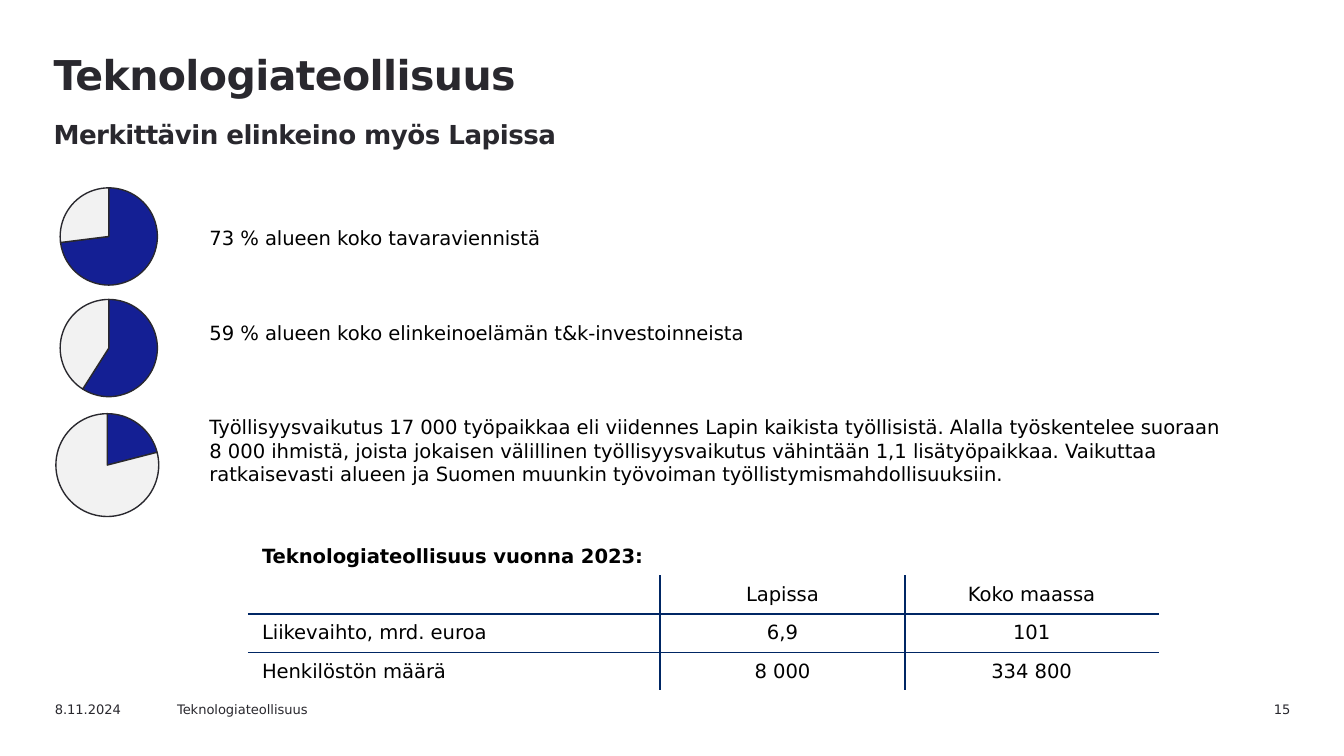
from dataclasses import dataclass

from pptx import Presentation
from pptx.chart.data import CategoryChartData
from pptx.dml.color import RGBColor
from pptx.enum.chart import XL_CHART_TYPE
from pptx.enum.text import MSO_ANCHOR, MSO_AUTO_SIZE, PP_ALIGN
from pptx.oxml import parse_xml
from pptx.oxml.ns import nsdecls
from pptx.util import Pt


@dataclass(frozen=True)
class Theme:
    font: str = "DejaVu Sans"
    dark: str = "29282E"
    black: str = "000000"
    blue: str = "141F94"
    pale: str = "F2F2F2"
    rule: str = "002664"
    head: float = 22
    sub: float = 14
    body: float = 10.5
    small: float = 7


THEME = Theme()


def write(para, text, size=THEME.body, color=THEME.black, bold=False,
          align=PP_ALIGN.LEFT, before=0, leading=None, track=0, tab=None):
    """Fill a paragraph; track is in hundredths of a point, tab in points."""
    props = para._p.get_or_add_pPr()
    props.set("marL", "0")
    props.set("indent", "0")
    props.append(parse_xml(f"<a:buNone {nsdecls('a')}/>"))
    if tab:
        props.append(parse_xml(f'<a:tabLst {nsdecls("a")}>'
                               f'<a:tab pos="{Pt(tab)}" algn="l"/></a:tabLst>'))
    para.alignment = align
    para.space_before, para.space_after = Pt(before), Pt(0)
    para.line_spacing = Pt(leading) if leading else 1.0
    if not text:
        para._p.append(parse_xml(
            f'<a:endParaRPr {nsdecls("a")} sz="{int(size * 100)}"/>'))
        return
    run = para.add_run()
    run.text = text
    run.font.name, run.font.size, run.font.bold = THEME.font, Pt(size), bold
    run.font.color.rgb = RGBColor.from_string(color)
    if track:
        run._r.get_or_add_rPr().set("spc", str(track))


class Page:
    """Holds the theme and the slide being drawn."""

    def __init__(self, deck, theme):
        self.theme = theme
        self.slide = deck.slides.add_slide(deck.slide_layouts[1])

    def fill(self, shape, box, lines):
        """Place a text shape and write (text, format) lines into it."""
        shape.left, shape.top, shape.width, shape.height = map(Pt, box)
        frame = shape.text_frame
        frame.word_wrap = True
        frame.auto_size = MSO_AUTO_SIZE.NONE
        frame.vertical_anchor = MSO_ANCHOR.TOP
        for i, (text, style) in enumerate(lines):
            para = frame.add_paragraph() if i else frame.paragraphs[0]
            write(para, text, **style)

    def title(self, box, head, sub):
        look = dict(color=self.theme.dark, bold=True, leading=27, track=-30)
        self.fill(self.slide.shapes.title, box,
                  [(head, dict(look, size=self.theme.head)),
                   (sub, dict(look, size=self.theme.sub))])

    def body(self, box, items, gap, tab):
        self.fill(self.slide.placeholders[1], box,
                  [(text, dict(before=gap if i else 0, tab=tab))
                   for i, text in enumerate(items)])

    def note(self, box, text, align=PP_ALIGN.LEFT):
        shape = self.slide.shapes.add_textbox(*map(Pt, box))
        self.fill(shape, box, [(text, dict(size=self.theme.small,
                                           color=self.theme.dark, align=align))])

    def pie(self, left, top, side, share):
        data = CategoryChartData()
        data.categories = ["1", "2"]
        data.add_series("Series 1", (share, 100 - share))
        chart = self.slide.shapes.add_chart(
            XL_CHART_TYPE.PIE, *map(Pt, (left, top, side, side)), data).chart
        chart.has_title = chart.has_legend = False
        chart.font.name, chart.font.size = self.theme.font, Pt(18)
        chart.font.color.rgb = RGBColor.from_string(self.theme.dark)
        plot = chart.plots[0]
        plot.vary_by_categories = False
        for i, color in enumerate((self.theme.blue, self.theme.pale)):
            look = plot.series[0].points[i].format
            look.fill.solid()
            look.fill.fore_color.rgb = RGBColor.from_string(color)
            look.line.color.rgb = RGBColor.from_string(self.theme.dark)
            look.line.width = Pt(0.75)

    def border(self, cell, sides):
        """Rule the given sides, which must come in the order L, R, T, B."""
        for side in sides:
            cell._tc.get_or_add_tcPr().append(parse_xml(
                f'<a:ln{side} {nsdecls("a")} w="{Pt(1)}"><a:solidFill>'
                f'<a:srgbClr val="{self.theme.rule}"/></a:solidFill></a:ln{side}>'))

    def table(self, left, top, widths, height, rows):
        last, end = len(rows) - 1, len(widths) - 1
        grid = self.slide.shapes.add_table(
            len(rows), len(widths), Pt(left), Pt(top),
            Pt(sum(widths)), Pt(height * len(rows))).table
        grid.first_row = grid.horz_banding = False
        for col, width in zip(grid.columns, widths):
            col.width = Pt(width)
        for r, row in enumerate(rows):
            grid.rows[r].height = Pt(height)
            for c, text in enumerate(row):
                cell = grid.cell(r, c)
                cell.vertical_anchor = MSO_ANCHOR.MIDDLE
                write(cell.text_frame.paragraphs[0], text, bold=r == 0,
                      align=PP_ALIGN.CENTER if c else PP_ALIGN.LEFT)
                if r:
                    inner = {"L": c > 0, "R": c < end, "T": r > 1, "B": r < last}
                    self.border(cell, [s for s, on in inner.items() if on])
                cell.fill.background()
        grid.cell(0, 0).merge(grid.cell(0, end))


def main():
    deck = Presentation()
    deck.slide_width, deck.slide_height = Pt(720), Pt(405)
    page = Page(deck, THEME)
    page.title((21.5, 22.5, 629, 51), "Teknologiateollisuus",
               "Merkittävin elinkeino myös Lapissa")
    page.body((105, 117.5, 590, 174), [
        "73 % alueen koko tavaraviennistä",
        "59 % alueen koko elinkeinoelämän t&k-investoinneista",
        "Työllisyysvaikutus 17 000 työpaikkaa eli viidennes Lapin kaikista "
        "työllisistä. Alalla työskentelee suoraan\t8 000 ihmistä, joista "
        "jokaisen välillinen työllisyysvaikutus vähintään 1,1 lisätyöpaikkaa. "
        "Vaikuttaa ratkaisevasti alueen ja Suomen muunkin työvoiman "
        "työllistymismahdollisuuksiin.",
    ], gap=38, tab=561)
    for left, top, side, share in ((22.3, 90.7, 72, 73), (22.3, 150.5, 72, 59),
                                   (20, 211.7, 75, 21)):
        page.pie(left, top, side, share)
    page.table(133.2, 288, (220.5, 131, 136), 20.5, [
        ("Teknologiateollisuus vuonna 2023:", "", ""),
        ("", "Lapissa", "Koko maassa"),
        ("Liikevaihto, mrd. euroa", "6,9", "101"),
        ("Henkilöstön määrä", "8 000", "334 800"),
    ])
    foot = 372.2
    page.note((22.3, foot, 72, 13), "8.11.2024")
    page.note((87.8, foot, 102, 13), "Teknologiateollisuus")
    page.note((630.7, foot, 67.7, 13), "15", PP_ALIGN.RIGHT)
    deck.save("out.pptx")


if __name__ == "__main__":
    main()
